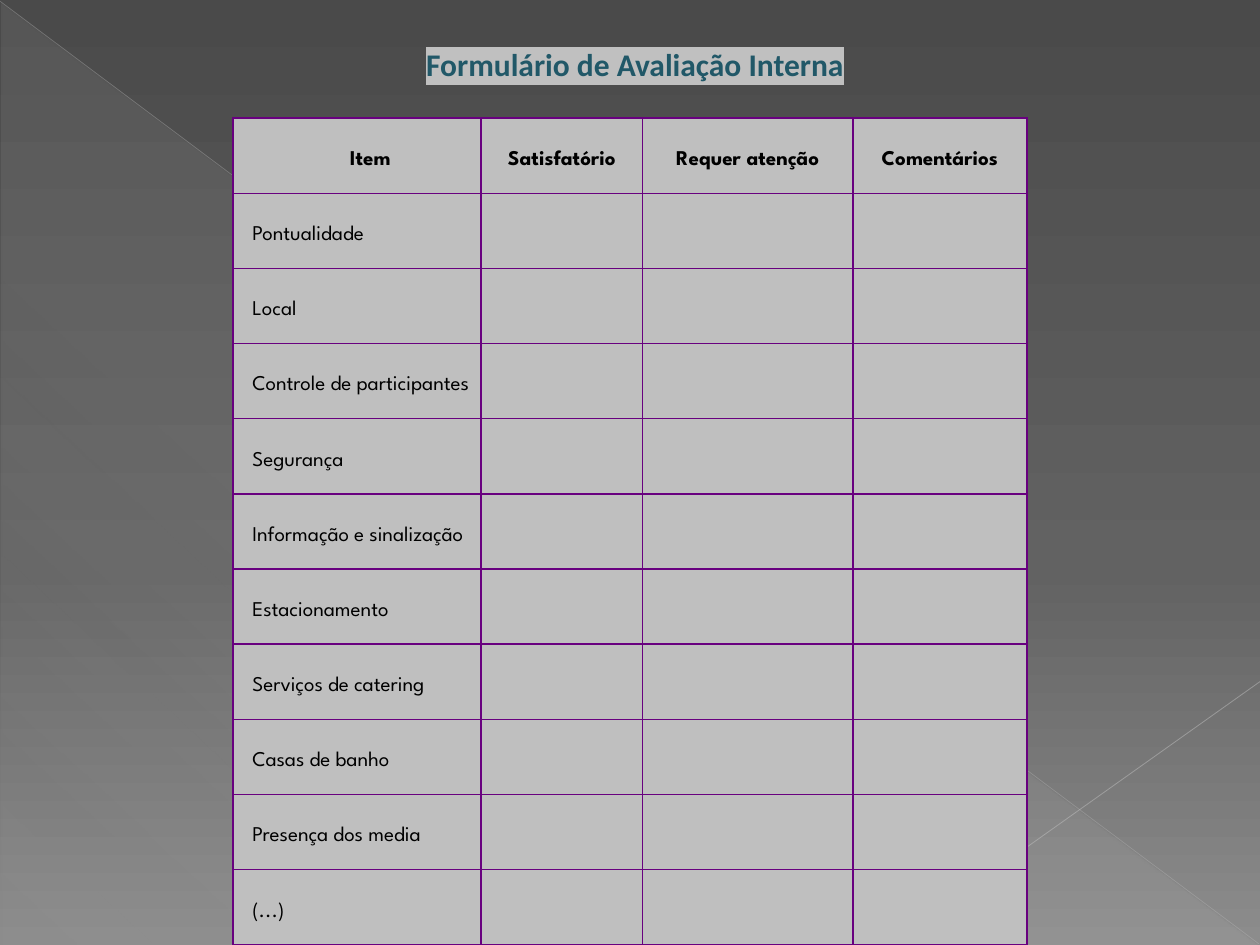
import pptx
import pptx.chart.data
import pptx.dml.color
import pptx.enum.shapes
import pptx.enum.text
import pptx.oxml
import pptx.oxml.ns
import pptx.util

Pt = pptx.util.Pt
qn = pptx.oxml.ns.qn
ALIGN = pptx.enum.text.PP_ALIGN
ANCHOR = pptx.enum.text.MSO_ANCHOR

TITLE = "Formulário de Avaliação Interna"
HEADERS = ["Item", "Satisfatório", "Requer atenção", "Comentários"]
ITEMS = [
    "Pontualidade", "Local", "Controle de participantes", "Segurança",
    "Informação e sinalização", "Estacionamento", "Serviços de catering",
    "Casas de banho", "Presença dos media", "(...)",
]

THEME = {
    "title_font": "Calibri", "title_size": 18, "title": "215868", "highlight": "C0C0C0",
    "table_font": "League Spartan", "table_size": 12, "text": "000000",
    "cell": "BFBFBF", "border": "68007F",
    # gradient stops: position, colour, opacity in percent
    "background": [(0, "4A4A4A", 100), (60, "626262", 100), (100, "8C8C8C", 100)],
    "triangle": [(0, "D2D2D2", 10), (70, "D2D2D2", 8), (100, "D2D2D2", 1)],
}

WIDTH, HEIGHT = 720, 540
TITLE_BOX = (180, 11.5, 365.8, 36.7)
TABLE_LEFT, TABLE_TOP, ROW_HEIGHT = 133.2, 67.5, 42.95
COLUMN_WIDTHS = [141.8, 92.2, 120.2, 99.4]
TRIANGLE_BOX = (0.7, 1.4, 718.6, 538.6)
# from x, from y, to x, to y, colour, width, opacity in percent
LINES = [
    (0, 0.7, 719.3, 539.3, "BFBFBF", 0.39, 35),
    (720, 389.5, 509, 539.3, "C6C6C6", 0.47, 45),
]


def points(values):
    return [Pt(value) for value in values]


def rgb(color):
    return pptx.dml.color.RGBColor.from_string(color)


def xml(tag, content="", **attributes):
    listed = "".join(f' {name}="{value}"' for name, value in attributes.items())
    namespace = pptx.oxml.ns.nsdecls("a")
    return pptx.oxml.parse_xml(f"<a:{tag} {namespace}{listed}>{content}</a:{tag}>")


def color_xml(color, opacity=100):
    return f'<a:srgbClr val="{color}"><a:alpha val="{opacity * 1000}"/></a:srgbClr>'


def set_gradient(parent, stops, angle):
    """Replace the solid fill of the parent element by a linear gradient."""
    listed = "".join(
        f'<a:gs pos="{position * 1000}">{color_xml(color, opacity)}</a:gs>'
        for position, color, opacity in stops
    )
    content = f'<a:gsLst>{listed}</a:gsLst><a:lin ang="{angle * 60000}" scaled="0"/>'
    parent.replace(parent.find(qn("a:solidFill")), xml("gradFill", content, rotWithShape=1))


def write(frame, text, *, font, size, color, bold=False, align=ALIGN.LEFT):
    para = frame.paragraphs[0]
    para.alignment = align
    para.line_spacing = 1.5
    para.space_before = Pt(0)
    para.space_after = Pt(10)
    span = para.add_run()
    span.text = text
    span.font.size = Pt(size)
    span.font.bold = bold
    span.font.color.rgb = rgb(color)
    span.font.name = font
    return span


def add_backdrop(page):
    page.background.fill.solid()
    set_gradient(page.element.find(".//" + qn("p:bgPr")), THEME["background"], 90)

    triangle = page.shapes.add_shape(
        pptx.enum.shapes.MSO_SHAPE.RIGHT_TRIANGLE, *points(TRIANGLE_BOX))
    triangle.shadow.inherit = False
    triangle.line.fill.background()
    triangle.fill.solid()
    set_gradient(triangle.element.spPr, THEME["triangle"], 133)

    for *ends, color, width, opacity in LINES:
        line = page.shapes.add_connector(
            pptx.enum.shapes.MSO_CONNECTOR.STRAIGHT, *points(ends))
        line.line.width = Pt(width)
        line.line.color.rgb = rgb(color)
        shade = line.element.spPr.find(".//" + qn("a:srgbClr"))
        shade.append(xml("alpha", val=opacity * 1000))
        line.element.spPr.append(xml("effectLst"))


def add_title(page):
    title = page.shapes.title
    title.left, title.top, title.width, title.height = points(TITLE_BOX)
    frame = title.text_frame
    frame.word_wrap = True
    frame.auto_size = pptx.enum.text.MSO_AUTO_SIZE.SHAPE_TO_FIT_TEXT
    frame.vertical_anchor = ANCHOR.TOP
    span = write(frame, TITLE, font=THEME["title_font"], size=THEME["title_size"],
                 color=THEME["title"], bold=True, align=ALIGN.CENTER)
    fill = span.font.fill._xPr.find(qn("a:solidFill"))
    fill.addnext(xml("highlight", color_xml(THEME["highlight"])))
    # Bring the title in front of the backdrop
    title.element.getparent().append(title.element)


def format_cell(cell):
    cell.vertical_anchor = ANCHOR.MIDDLE
    cell.margin_left = cell.margin_right = Pt(5)
    cell.margin_top = cell.margin_bottom = Pt(0)
    properties = cell._tc.get_or_add_tcPr()
    for side in ("lnL", "lnR", "lnT", "lnB"):
        content = f'<a:solidFill>{color_xml(THEME["border"])}</a:solidFill>'
        properties.append(xml(side, content, w=Pt(1)))
    cell.fill.solid()
    cell.fill.fore_color.rgb = rgb(THEME["cell"])


def add_form(page):
    row_count = len(ITEMS) + 1
    box = (TABLE_LEFT, TABLE_TOP, sum(COLUMN_WIDTHS), row_count * ROW_HEIGHT)
    table = page.shapes.add_table(row_count, len(HEADERS), *points(box)).table
    table.first_row = table.horz_banding = False
    for column, width in zip(table.columns, COLUMN_WIDTHS):
        column.width = Pt(width)
    for row in table.rows:
        row.height = Pt(ROW_HEIGHT)
    for cell in table.iter_cells():
        format_cell(cell)

    style = {"font": THEME["table_font"], "size": THEME["table_size"], "color": THEME["text"]}
    for column, header in enumerate(HEADERS):
        write(table.cell(0, column).text_frame, header, bold=True, align=ALIGN.CENTER, **style)
    table.cell(0, 0).margin_left = Pt(20)
    for row, item in enumerate(ITEMS, start=1):
        cell = table.cell(row, 0)
        cell.margin_left = Pt(11)
        cell.margin_right = Pt(2)
        write(cell.text_frame, item, **style)


def main():
    deck = pptx.Presentation()
    deck.slide_width, deck.slide_height = points((WIDTH, HEIGHT))
    page = deck.slides.add_slide(deck.slide_layouts.get_by_name("Title Only"))
    add_backdrop(page)
    add_form(page)
    add_title(page)
    deck.save("out.pptx")


if __name__ == "__main__":
    main()
